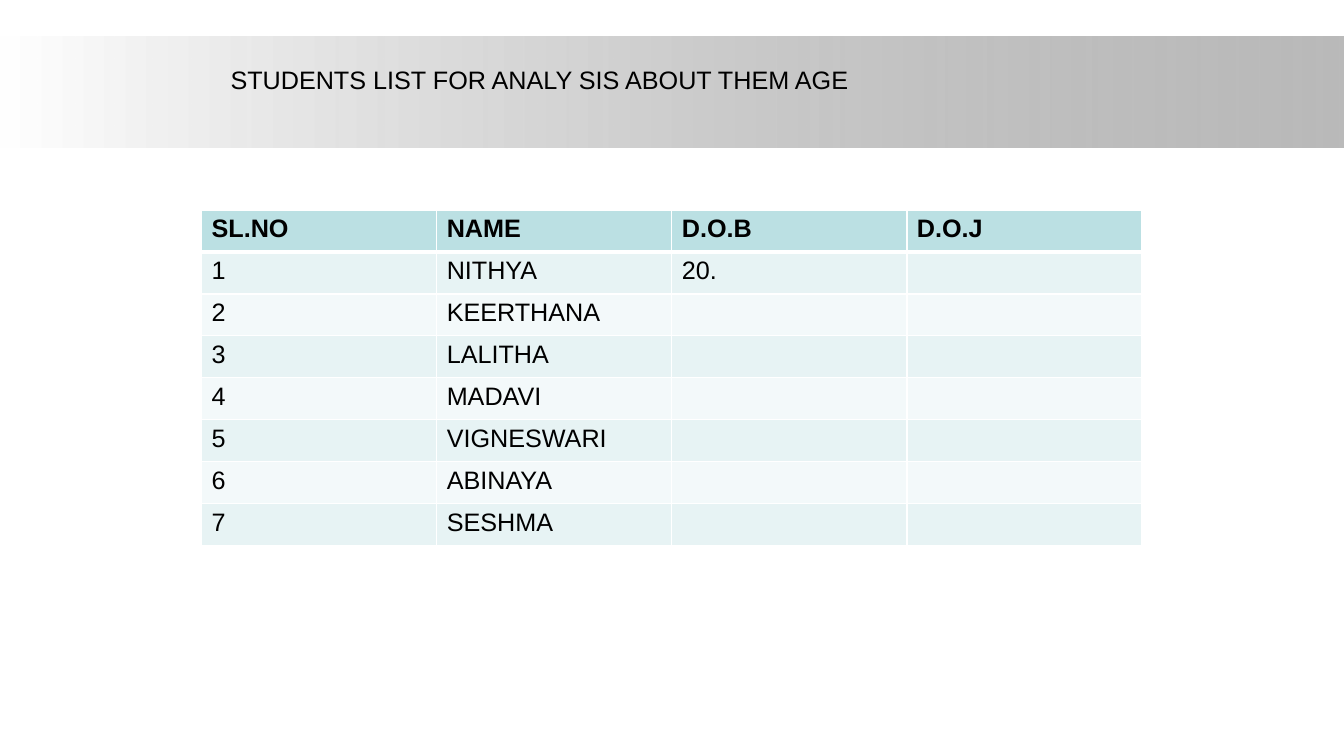
import lxml.etree
import pptx
import pptx.dml.color
import pptx.enum.shapes
import pptx.oxml.ns
import pptx.util

Cm = pptx.util.Cm
Pt = pptx.util.Pt
qn = pptx.oxml.ns.qn

HEADS = ["SL.NO", "NAME", "D.O.B", "D.O.J"]
NAMES = ["NITHYA", "KEERTHANA", "LALITHA", "MADAVI", "VIGNESWARI", "ABINAYA", "SESHMA"]
BIRTHS = {"NITHYA": "20."}


def color(code):
    return pptx.dml.color.RGBColor.from_string(code)


def write(frame, text, bold=False):
    run = frame.paragraphs[0].add_run()
    run.text = text
    run.font.name = "Arial"
    run.font.size = Pt(18)
    run.font.bold = bold
    run.font.color.rgb = color("000000")


def band(slide):
    shape = slide.shapes.add_shape(
        pptx.enum.shapes.MSO_SHAPE.RECTANGLE, 0, Cm(0.91), Cm(33.87), Cm(2.8))
    shape.shadow.inherit = False
    shape.line.fill.background()
    shape.fill.gradient()
    shape.fill.gradient_angle = 0
    for stop, code in zip(shape.fill.gradient_stops, ["FFFFFF", "808080"]):
        stop.color.rgb = color(code)
    last = shape.element.xpath(".//a:gs/a:srgbClr")[-1]
    lxml.etree.SubElement(last, qn("a:alpha"), val="54000")


def title(slide, text):
    box = slide.shapes.add_textbox(Cm(5.56), Cm(1.5), Cm(23.72), Cm(1.02))
    box.text_frame.word_wrap = True
    write(box.text_frame, text)


def border(cell, side, width):
    line = lxml.etree.SubElement(
        cell._tc.get_or_add_tcPr(), qn("a:ln" + side), w=str(Pt(width)))
    fill = lxml.etree.SubElement(line, qn("a:solidFill"))
    lxml.etree.SubElement(fill, qn("a:srgbClr"), val="FFFFFF")


def style(cell, row):
    widths = {"L": 1, "R": 1, "T": 3 if row == 1 else 1, "B": 3 if row == 0 else 1}
    for side, width in widths.items():
        border(cell, side, width)
    cell.fill.solid()
    shade = "BBE0E3" if row == 0 else "E7F3F4" if row % 2 else "F3F9FA"
    cell.fill.fore_color.rgb = color(shade)


def grid(slide, rows):
    table = slide.shapes.add_table(
        len(rows), len(HEADS), Cm(5.08), Cm(5.29), Cm(23.7), Cm(8.47)).table
    for r, row in enumerate(rows):
        for c, text in enumerate(row):
            cell = table.cell(r, c)
            style(cell, r)
            if text:
                write(cell.text_frame, text, bold=r == 0)


def main():
    deck = pptx.Presentation()
    deck.slide_width, deck.slide_height = Cm(33.87), Cm(19.05)
    slide = deck.slides.add_slide(deck.slide_layouts[6])
    band(slide)
    rows = [[str(n), name, BIRTHS.get(name, ""), ""] for n, name in enumerate(NAMES, 1)]
    grid(slide, [HEADS] + rows)
    title(slide, "STUDENTS LIST FOR ANALY SIS ABOUT THEM AGE")
    deck.save("out.pptx")


if __name__ == "__main__":
    main()
